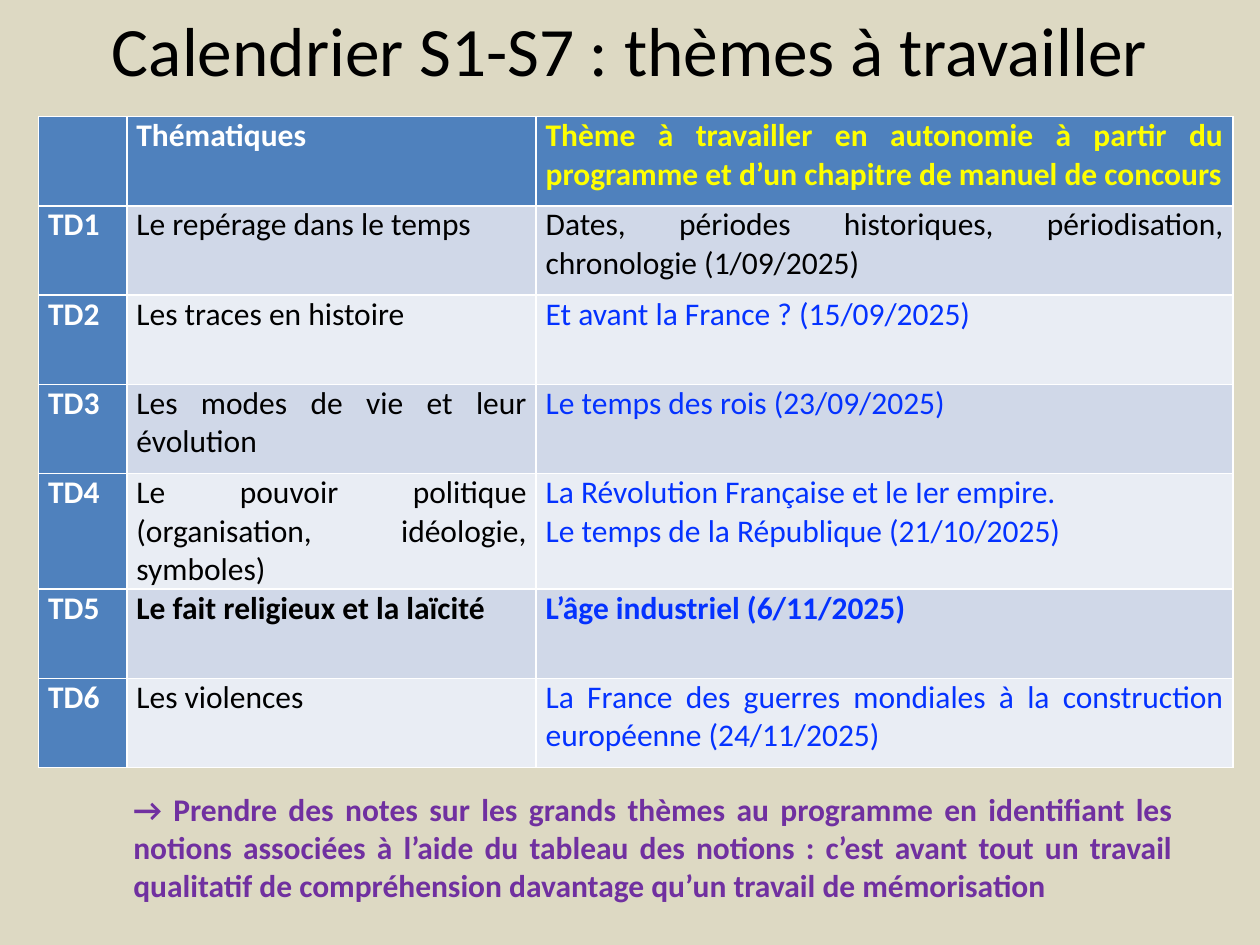
from pptx import Presentation
from pptx.dml.color import RGBColor
from pptx.enum.text import MSO_ANCHOR, PP_ALIGN
from pptx.util import Cm, Pt

FONT = "Calibri"
BEIGE = RGBColor(0xDD, 0xD9, 0xC3)
BLACK = RGBColor(0x00, 0x00, 0x00)
WHITE = RGBColor(0xFF, 0xFF, 0xFF)
YELLOW = RGBColor(0xFF, 0xFF, 0x00)
BLUE = RGBColor(0x04, 0x32, 0xFF)
PURPLE = RGBColor(0x70, 0x30, 0xA0)
HEADER_FILL = RGBColor(0x4F, 0x81, 0xBD)
BAND_FILLS = (RGBColor(0xE9, 0xED, 0xF4), RGBColor(0xD0, 0xD8, 0xE8))

TITLE = "Calendrier S1-S7 : thèmes à travailler"
HEADINGS = (
    "",
    "Thématiques",
    "Thème à travailler en autonomie à partir du programme et d’un chapitre "
    "de manuel de concours",
)
SESSIONS = (
    ("TD1", "Le repérage dans le temps",
     "Dates, périodes historiques, périodisation, chronologie (1/09/2025)"),
    ("TD2", "Les traces en histoire", "Et avant la France ? (15/09/2025)"),
    ("TD3", "Les modes de vie et leur évolution",
     "Le temps des rois (23/09/2025)"),
    ("TD4", "Le pouvoir politique (organisation, idéologie, symboles)",
     "La Révolution Française et le Ier empire.\n"
     "Le temps de la République (21/10/2025)"),
    ("TD5", "Le fait religieux et la laïcité", "L’âge industriel (6/11/2025)"),
    ("TD6", "Les violences",
     "La France des guerres mondiales à la construction européenne "
     "(24/11/2025)"),
)
NOTE = (
    "→ Prendre des notes sur les grands thèmes au programme en identifiant "
    "les notions associées à l’aide du tableau des notions : c’est avant tout "
    "un travail qualitatif de compréhension davantage qu’un travail de "
    "mémorisation"
)
COLUMN_WIDTHS = (Cm(1.78), Cm(8.25), Cm(14.05))
ROW_HEIGHT = Cm(1.8)
BOLD_SESSION = "TD5"
BLACK_THEME_SESSION = "TD1"


def write_text(text_frame, text, color, size=18, bold=False,
               alignment=PP_ALIGN.JUSTIFY):
    text_frame.text = text
    for paragraph in text_frame.paragraphs:
        paragraph.alignment = alignment
        font = paragraph.font
        font.name = FONT
        font.size = Pt(size)
        font.bold = bold
        font.color.rgb = color


def add_title(slide):
    title = slide.shapes.title
    title.left, title.top = Cm(1.27), Cm(0)
    title.width, title.height = Cm(22.86), Cm(1.96)
    title.text_frame.vertical_anchor = MSO_ANCHOR.MIDDLE
    write_text(title.text_frame, TITLE, BLACK, 39.6,
               alignment=PP_ALIGN.CENTER)


def fill_cell(cell, text, fill, color, bold):
    cell.fill.solid()
    cell.fill.fore_color.rgb = fill
    cell.margin_left = cell.margin_right = Cm(0.19)
    cell.margin_top = cell.margin_bottom = Cm(0)
    write_text(cell.text_frame, text, color, bold=bold)


def add_calendar(slide):
    """Add the table; its default style supplies the white borders."""
    row_count = len(SESSIONS) + 1
    table = slide.shapes.add_table(
        row_count, len(HEADINGS), Cm(0.78), Cm(2.35),
        sum(COLUMN_WIDTHS), ROW_HEIGHT * row_count).table
    table.first_col = True
    for column, width in zip(table.columns, COLUMN_WIDTHS):
        column.width = width
    for row in table.rows:
        row.height = ROW_HEIGHT

    for column, heading in enumerate(HEADINGS):
        color = YELLOW if column == 2 else WHITE
        fill_cell(table.cell(0, column), heading, HEADER_FILL, color, True)
    for row, (session, topic, theme) in enumerate(SESSIONS, start=1):
        band = BAND_FILLS[row % 2]
        bold = session == BOLD_SESSION
        theme_color = BLACK if session == BLACK_THEME_SESSION else BLUE
        fill_cell(table.cell(row, 0), session, HEADER_FILL, WHITE, True)
        fill_cell(table.cell(row, 1), topic, band, BLACK, bold)
        fill_cell(table.cell(row, 2), theme, band, theme_color, bold)


def add_note(slide):
    text_box = slide.shapes.add_textbox(Cm(2.44), Cm(15.8), Cm(21.46), Cm(2.57))
    text_box.text_frame.word_wrap = True
    write_text(text_box.text_frame, NOTE, PURPLE, bold=True)


def main():
    presentation = Presentation()
    presentation.slide_width, presentation.slide_height = Cm(25.4), Cm(19.05)
    slide = presentation.slides.add_slide(presentation.slide_layouts[5])
    slide.background.fill.solid()
    slide.background.fill.fore_color.rgb = BEIGE
    add_title(slide)
    add_calendar(slide)
    add_note(slide)
    presentation.save("out.pptx")


if __name__ == "__main__":
    main()
